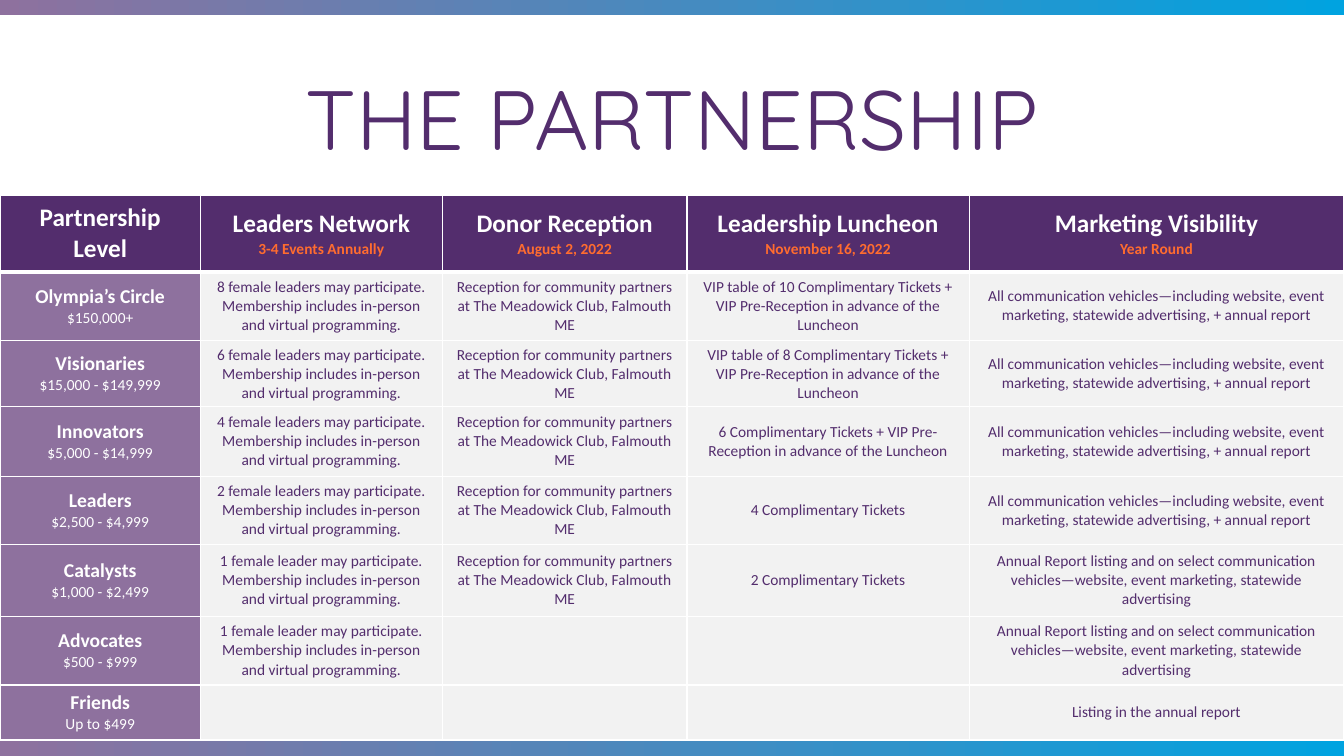
from dataclasses import dataclass

from lxml import etree
from pptx import Presentation
from pptx import util as u
from pptx.dml.color import RGBColor
from pptx.enum import shapes, text
from pptx.oxml.ns import qn


@dataclass(frozen=True)
class Theme:
    """Colours, fonts and type sizes of the slide."""
    deep: str = "532D6D"
    mauve: str = "8E719E"
    sky: str = "00A3E0"
    orange: str = "FF6C2F"
    pale: str = "F2F2F2"
    white: str = "FFFFFF"
    title_font: str = "Quicksand"
    body_font: str = "Calibri"
    title: int = 60
    heading: int = 18
    level: int = 14
    body: int = 11


T = Theme()
WIDTH, HEIGHT = u.Inches(13.33), u.Inches(7.5)
BAR = 0.02
TABLE_TOP, TABLE_SHARE = 0.26, 0.72
COLUMNS = (1.99, 2.4, 2.43, 2.8, 3.72)
ROWS = (0.76, 0.68, 0.66, 0.69, 0.68, 0.71, 0.68, 0.54)

HEADINGS = (
    ("Partnership", "Level"),
    ("Leaders Network", "3-4 Events Annually"),
    ("Donor Reception", "August 2, 2022"),
    ("Leadership Luncheon", "November 16, 2022"),
    ("Marketing Visibility", "Year Round"),
)
NETWORK = "{} may participate. Membership includes in-person and virtual programming."
RECEPTION = "Reception for community partners at The Meadowick Club, Falmouth ME"
VIP_TABLE = "VIP table of {} Complimentary Tickets + VIP Pre-Reception in advance of the Luncheon"
ALL_VEHICLES = ("All communication vehicles—including website, event marketing, "
                "statewide advertising, + annual report")
SELECT_VEHICLES = ("Annual Report listing and on select communication vehicles—website, "
                   "event marketing, statewide advertising")
LEVELS = (
    ("Olympia’s Circle", "$150,000+", "8 female leaders", RECEPTION,
     VIP_TABLE.format(10), ALL_VEHICLES),
    ("Visionaries", "$15,000 - $149,999", "6 female leaders", RECEPTION,
     VIP_TABLE.format(8), ALL_VEHICLES),
    ("Innovators", "$5,000 - $14,999", "4 female leaders", RECEPTION,
     "6 Complimentary Tickets + VIP Pre-Reception in advance of the Luncheon", ALL_VEHICLES),
    ("Leaders", "$2,500 - $4,999", "2 female leaders", RECEPTION,
     "4 Complimentary Tickets", ALL_VEHICLES),
    ("Catalysts", "$1,000 - $2,499", "1 female leader", RECEPTION,
     "2 Complimentary Tickets", SELECT_VEHICLES),
    ("Advocates", "$500 - $999", "1 female leader", "", "", SELECT_VEHICLES),
    ("Friends", "Up to $499", "", "", "", "Listing in the annual report"),
)


def rgb(colour):
    """Turn a hex string into a colour."""
    return RGBColor.from_string(colour)


def style(p, size, colour, bold=False, font=T.body_font):
    """Centre a paragraph and set its font."""
    p.alignment = text.PP_ALIGN.CENTER
    p.font.name, p.font.size, p.font.bold = font, u.Pt(size), bold
    p.font.color.rgb = rgb(colour)


def add_bar(slide, top):
    """Draw a full-width gradient bar at a share of the slide's height."""
    sp = slide.shapes.add_shape(shapes.MSO_SHAPE.RECTANGLE, 0, int(HEIGHT * top),
                                WIDTH, int(HEIGHT * BAR))
    sp.shadow.inherit = False
    sp.line.fill.background()
    sp.fill.gradient()
    sp.fill.gradient_angle = 180
    for stop, colour in zip(sp.fill.gradient_stops, (T.sky, T.mauve)):
        stop.color.rgb = rgb(colour)


def add_title(slide, words):
    """Add the large centred title."""
    box = slide.shapes.add_textbox(int(WIDTH * 0.07), int(HEIGHT * 0.065),
                                   int(WIDTH * 0.86), int(HEIGHT * 0.195))
    tf = box.text_frame
    tf.word_wrap = True
    tf.vertical_anchor = text.MSO_ANCHOR.MIDDLE
    p = tf.paragraphs[0]
    p.text, p.line_spacing = words, 0.9
    style(p, T.title, T.deep, font=T.title_font)


def set_borders(cell, **widths):
    """Give a cell white borders, with a width in points for each side."""
    tc_pr = cell._tc.get_or_add_tcPr()
    for side, width in widths.items():
        ln = etree.SubElement(tc_pr, qn(f"a:ln{side}"), w=str(u.Pt(width)))
        fill = etree.SubElement(ln, qn("a:solidFill"))
        etree.SubElement(fill, qn("a:srgbClr"), val=T.white)


def fill_cell(cell, fill, lines, top=1, bottom=1):
    """Fill a cell with lines given as (words, size, colour, bold)."""
    set_borders(cell, L=1, R=1, T=top, B=bottom)
    cell.fill.solid()
    cell.fill.fore_color.rgb = rgb(fill)
    cell.vertical_anchor = text.MSO_ANCHOR.MIDDLE
    tf = cell.text_frame
    for i, (words, *look) in enumerate(lines):
        p = tf.add_paragraph() if i else tf.paragraphs[0]
        p.text = words
        style(p, *look)


def add_levels_table(slide):
    """Add the table of partnership levels and their benefits."""
    height = HEIGHT * TABLE_SHARE
    table = slide.shapes.add_table(len(ROWS), len(COLUMNS), 0, int(HEIGHT * TABLE_TOP) - u.Pt(1),
                                   WIDTH, int(height)).table
    table.first_row = table.horz_banding = False
    for column, share in zip(table.columns, COLUMNS):
        column.width = int(WIDTH * share / sum(COLUMNS))
    for row, share in zip(table.rows, ROWS):
        row.height = int(height * share / sum(ROWS))

    for c, (heading, detail) in enumerate(HEADINGS):
        second = (T.body, T.orange) if c else (T.heading, T.white)
        fill_cell(table.cell(0, c), T.deep,
                  [(heading, T.heading, T.white, True), (detail, *second, True)], bottom=3)

    for r, (level, amount, leaders, *benefits) in enumerate(LEVELS, 1):
        fill_cell(table.cell(r, 0), T.mauve,
                  [(level, T.level, T.white, True), (amount, T.body, T.white)],
                  top=3 if r == 1 else 1)
        network = NETWORK.format(leaders) if leaders else ""
        for c, words in enumerate((network, *benefits), 1):
            fill_cell(table.cell(r, c), T.pale, [(words, T.body, T.deep)],
                      top=3 if r == 1 else 1)


def main():
    """Build the partnership slide and save it."""
    prs = Presentation()
    prs.slide_width, prs.slide_height = WIDTH, HEIGHT
    slide = prs.slides.add_slide(prs.slide_layouts[6])
    add_title(slide, "THE PARTNERSHIP")
    for top in (0, 1 - BAR):
        add_bar(slide, top)
    add_levels_table(slide)
    prs.save("out.pptx")


if __name__ == "__main__":
    main()
